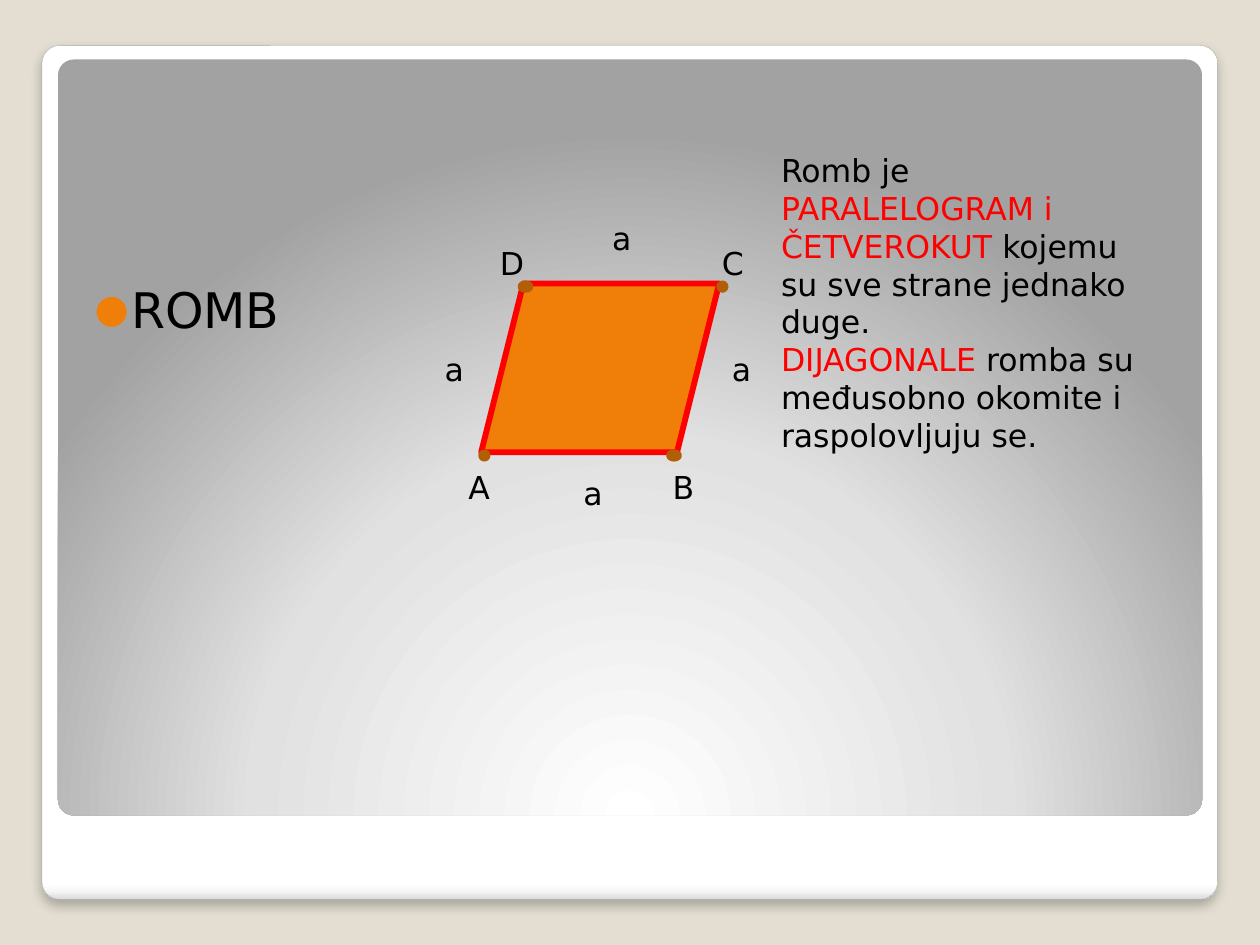
from dataclasses import dataclass
from typing import NamedTuple

from lxml.etree import SubElement
from pptx import Presentation
from pptx.dml.color import RGBColor
from pptx.enum.shapes import MSO_SHAPE
from pptx.enum.text import MSO_ANCHOR, MSO_AUTO_SIZE, PP_ALIGN
from pptx.oxml import parse_xml
from pptx.oxml.ns import nsdecls, qn
from pptx.util import Pt


@dataclass(frozen=True)
class Theme:
    font: str = "DejaVu Sans"
    heading_size: float = 28
    text_size: float = 18
    outline: float = 3.35
    background: str = "E3DED1"
    card_line: str = "A4A4A4"
    text: str = "000000"
    accent: str = "FF0000"
    fill: str = "F07F09"
    vertex_line: str = "B25E07"
    card_stops: tuple = ((0, "FFFFFF"), (98, "FFFFFF"), (99, "F7F7F7"), (100, "DADADA"))
    panel_stops: tuple = ((0, "FFFFFF"), (55, "E1E1E1"), (100, "A2A2A2"))


class Area(NamedTuple):
    left: float
    top: float
    width: float
    height: float


class Span(NamedTuple):
    text: str
    color: str


class Label(NamedTuple):
    text: str
    left: float
    top: float
    width: float


class Vertex(NamedTuple):
    left: float
    top: float
    width: float


THEME = Theme()
LABEL_HEIGHT = 28.8
VERTEX_HEIGHT = 3.6
RHOMBUS = Area(275, 162, 136, 96.5)
SLANT = RHOMBUS.height / 4
RIGHT = RHOMBUS.left + RHOMBUS.width
BOTTOM = RHOMBUS.top + RHOMBUS.height

VERTICES = (
    Vertex(RHOMBUS.left, BOTTOM, 3.6),
    Vertex(RIGHT - SLANT - 4.6, BOTTOM, 5.76),
    Vertex(RHOMBUS.left + SLANT - 1.7, RHOMBUS.top, 5.76),
    Vertex(RIGHT, RHOMBUS.top, 3.6),
)
LABELS = (
    Label("a", 342.7, 121.7, 39.6),
    Label("a", 326.2, 267.1, 28.1),
    Label("a", 247, 196.6, 28.1),
    Label("a", 411.1, 196.6, 28.1),
    Label("A", 260.6, 264.2, 25.9),
    Label("B", 377.3, 264.2, 17.3),
    Label("C", 405.4, 136.1, 20.2),
    Label("D", 278.6, 136.1, 24.5),
)
DEFINITION = (
    (
        Span("Romb je ", THEME.text),
        Span("PARALELOGRAM i ČETVEROKUT ", THEME.accent),
        Span("kojemu su sve strane jednako duge.", THEME.text),
    ),
    (
        Span("DIJAGONALE", THEME.accent),
        Span(" romba su međusobno okomite i raspolovljuju se.", THEME.text),
    ),
)


def lengths(area: Area) -> list:
    return [Pt(value) for value in area]


def add_span(para, span: Span, size: float) -> None:
    run = para.add_run()
    run.text = span.text
    run.font.name = THEME.font
    run.font.size = Pt(size)
    run.font.color.rgb = RGBColor.from_string(span.color)


def add_text(page, area: Area, paragraphs: tuple) -> None:
    box = page.shapes.add_textbox(*lengths(area))
    frame = box.text_frame
    frame.word_wrap = True
    frame.auto_size = MSO_AUTO_SIZE.SHAPE_TO_FIT_TEXT
    for index, spans in enumerate(paragraphs):
        para = frame.add_paragraph() if index else frame.paragraphs[0]
        for span in spans:
            add_span(para, span, THEME.text_size)


def add_figure(page, kind: MSO_SHAPE, area: Area, line: str) -> None:
    shape = page.shapes.add_shape(kind, *lengths(area))
    shape.shadow.inherit = False
    shape.fill.solid()
    shape.fill.fore_color.rgb = RGBColor.from_string(THEME.fill)
    shape.line.color.rgb = RGBColor.from_string(line)
    shape.line.width = Pt(THEME.outline)


def add_panel(page, area: Area, stops: tuple, direction: str):
    shape = page.shapes.add_shape(MSO_SHAPE.ROUNDED_RECTANGLE, *lengths(area))
    shape.adjustments[0] = 0.021
    shape.shadow.inherit = False
    shape.line.fill.background()
    shape.fill.background()
    stop_xml = "".join(
        f'<a:gs pos="{position * 1000}"><a:srgbClr val="{color}"/></a:gs>'
        for position, color in stops
    )
    gradient = parse_xml(
        f'<a:gradFill {nsdecls("a")} rotWithShape="1">'
        f"<a:gsLst>{stop_xml}</a:gsLst>{direction}</a:gradFill>"
    )
    properties = shape.element.spPr
    properties.replace(properties.find(qn("a:noFill")), gradient)
    return shape


def add_card(page) -> None:
    card = add_panel(
        page, Area(24, 26, 671.8, 488), THEME.card_stops, '<a:lin ang="5400000" scaled="0"/>'
    )
    card.line.color.rgb = RGBColor.from_string(THEME.card_line)
    card.line.width = Pt(0.16)
    effects = card.element.spPr.find(qn("a:effectLst"))
    shadow = SubElement(
        effects, qn("a:outerShdw"), blurRad=str(Pt(6)), dist=str(Pt(4)), dir="5400000"
    )
    color = SubElement(shadow, qn("a:srgbClr"), val="000000")
    SubElement(color, qn("a:alpha"), val="25000")


def fill_heading(body) -> None:
    body.left, body.top, body.width, body.height = lengths(Area(39.6, 41.8, 644.4, 329.8))
    frame = body.text_frame
    frame.auto_size = MSO_AUTO_SIZE.NONE
    frame.vertical_anchor = MSO_ANCHOR.TOP
    frame.margin_left, frame.margin_top = Pt(14.4), Pt(118)
    frame.margin_right, frame.margin_bottom = Pt(7.2), Pt(3.6)
    para = frame.paragraphs[0]
    para.alignment = PP_ALIGN.LEFT
    para.space_before = Pt(0)
    properties = para._p.get_or_add_pPr()
    properties.set("marL", str(Pt(21)))
    properties.set("indent", str(Pt(-21)))
    bullet_color = SubElement(properties, qn("a:buClr"))
    SubElement(bullet_color, qn("a:srgbClr"), val=THEME.fill)
    SubElement(properties, qn("a:buSzPct"), val="80000")
    SubElement(properties, qn("a:buFont"), typeface=THEME.font)
    SubElement(properties, qn("a:buChar"), char="●")
    add_span(para, Span("ROMB", THEME.text), THEME.heading_size)


def main() -> None:
    deck = Presentation()
    deck.slide_width, deck.slide_height = Pt(720), Pt(540)
    page = deck.slides.add_slide(deck.slide_layouts[1])
    page.background.fill.solid()
    page.background.fill.fore_color.rgb = RGBColor.from_string(THEME.background)
    title = page.shapes.title.element
    title.getparent().remove(title)
    body = page.placeholders[1]
    add_card(page)
    add_panel(
        page,
        Area(33.1, 34, 653.8, 432),
        THEME.panel_stops,
        '<a:path path="circle"><a:fillToRect l="50000" t="175000" r="50000" b="-75000"/></a:path>',
    )
    page.shapes._spTree.append(body.element)
    fill_heading(body)
    add_figure(page, MSO_SHAPE.PARALLELOGRAM, RHOMBUS, THEME.accent)
    for vertex in VERTICES:
        add_figure(page, MSO_SHAPE.OVAL, Area(*vertex, VERTEX_HEIGHT), THEME.vertex_line)
    for label in LABELS:
        area = Area(label.left, label.top, label.width, LABEL_HEIGHT)
        add_text(page, area, ((Span(label.text, THEME.text),),))
    add_text(page, Area(439.2, 82.8, 226.8, 181.4), DEFINITION)
    deck.save("out.pptx")


if __name__ == "__main__":
    main()
